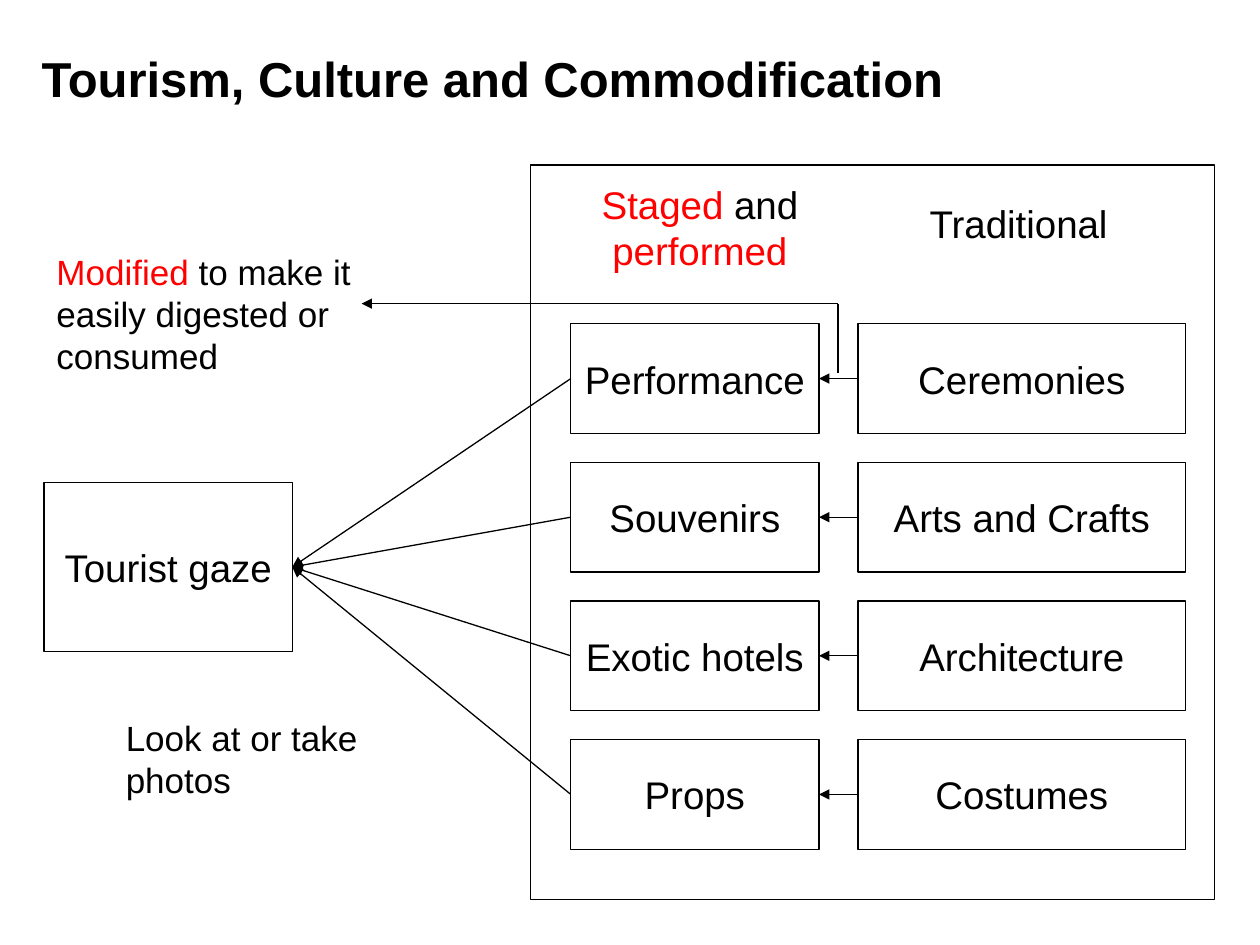
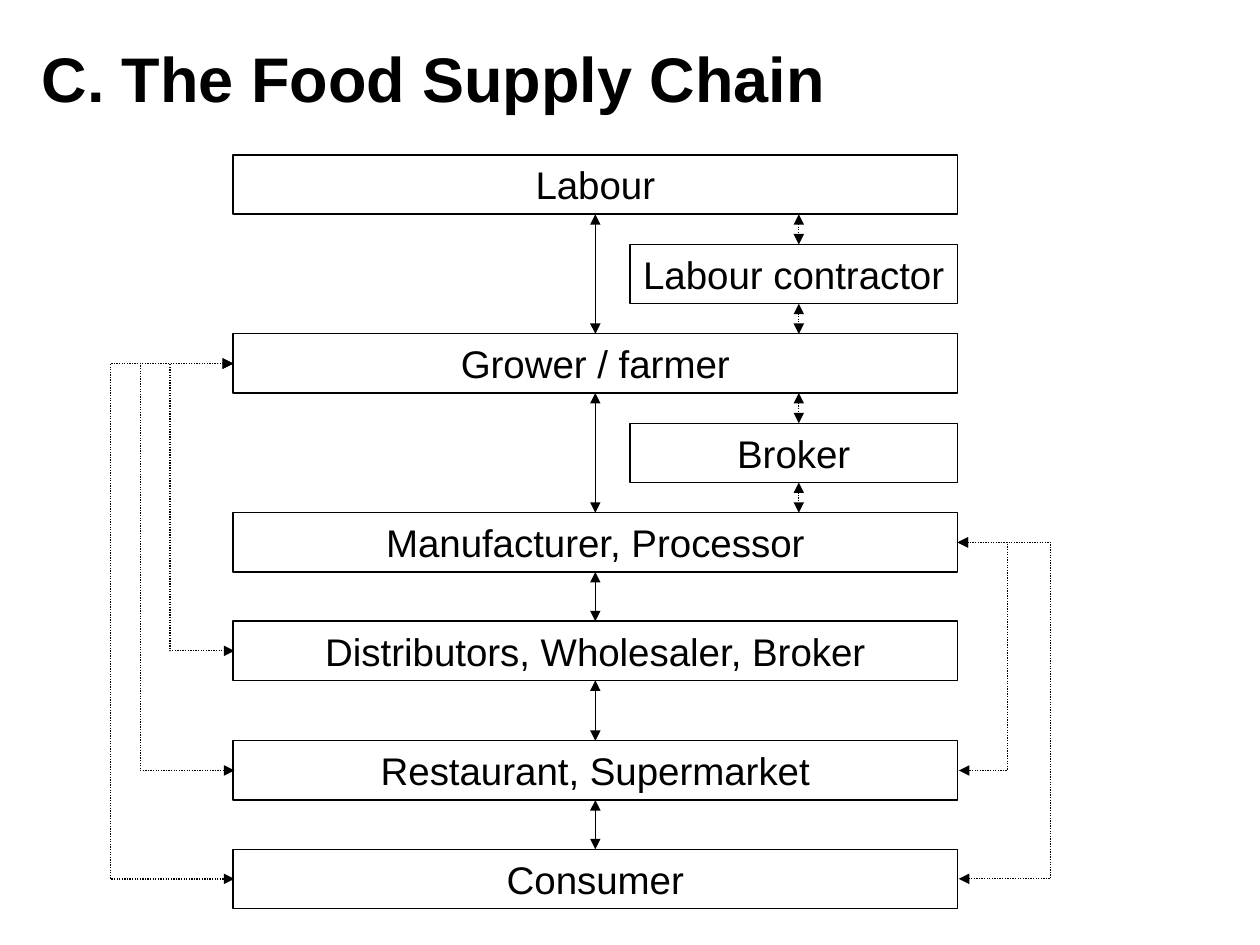
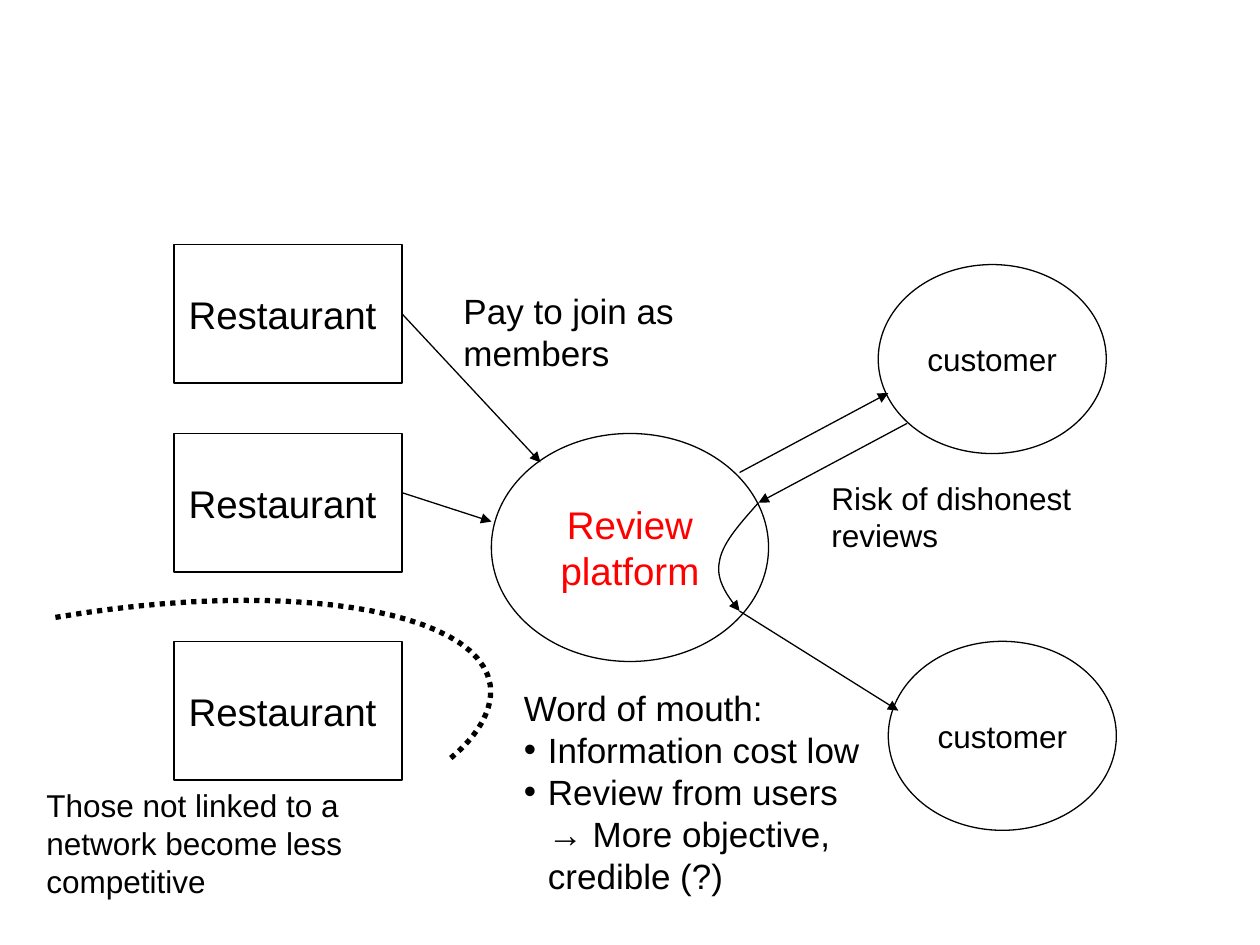
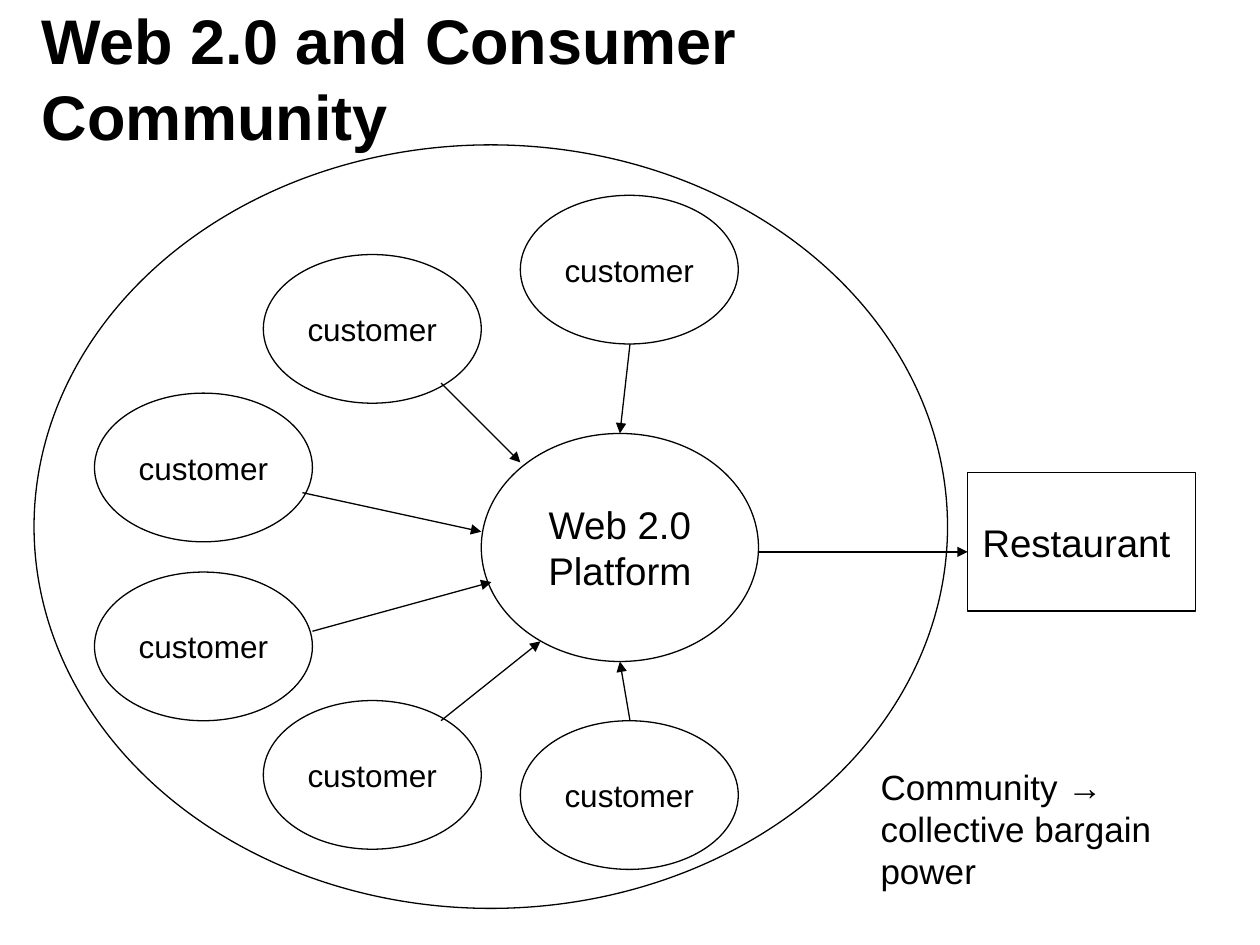
from dataclasses import dataclass

from lxml import etree
from pptx import Presentation
from pptx.dml.color import RGBColor
from pptx.enum import dml, shapes, text
from pptx.oxml import ns
from pptx.util import Inches, Pt


@dataclass(frozen=True)
class Theme:
    font: str = "Arial"
    ink: RGBColor = RGBColor(0, 0, 0)
    accent: RGBColor = RGBColor(0xFF, 0, 0)
    title: int = 36
    long_title: int = 28
    label: int = 22
    note: int = 20
    small: int = 18
    line: float = 0.75
    heavy: float = 3


@dataclass(frozen=True)
class Box:
    """A region in inches; `at` turns offsets within it into slide positions."""
    x: float
    y: float
    w: float
    h: float

    def at(self, dx, dy):
        return self.x + dx, self.y + dy

    def sub(self, dx, dy, w, h):
        return Box(*self.at(dx, dy), w, h)

    def lengths(self):
        return [Inches(v) for v in (self.x, self.y, self.w, self.h)]


T = Theme()
TITLE = Box(0.23, 0.15, 8.03, 0.93)
TOP, LEFT, BOTTOM, RIGHT = range(4)
RECT, OVAL = shapes.MSO_SHAPE.RECTANGLE, shapes.MSO_SHAPE.OVAL
CENTER = text.PP_ALIGN.CENTER


def style_paragraph(p, size, color=T.ink, align=None, bold=False):
    p.font.name, p.font.size, p.font.bold = T.font, Pt(size), bold
    p.font.color.rgb = color
    p.alignment = align


def add_runs(p, runs):
    """Fill a paragraph with (words, colour) pairs."""
    for words, color in runs:
        r = p.add_run()
        r.text = words
        r.font.color.rgb = color


def style_line(sp, width=T.line, dotted=False, heads=""):
    """Format an outline; heads names the ends with arrowheads."""
    sp.line.color.rgb = T.ink
    sp.line.width = Pt(width)
    if dotted:
        sp.line.dash_style = dml.MSO_LINE.ROUND_DOT
    ln = sp._element.spPr.find(ns.qn("a:ln"))
    for end in heads.split():
        etree.SubElement(ln, ns.qn(f"a:{end}End"), type="triangle")


def add_title(slide, words, size=T.title):
    sp = slide.shapes.title
    sp.left, sp.top, sp.width, sp.height = TITLE.lengths()
    tf = sp.text_frame
    tf.text = words
    tf.auto_size = text.MSO_AUTO_SIZE.NONE
    tf.vertical_anchor = text.MSO_ANCHOR.MIDDLE
    style_paragraph(tf.paragraphs[0], size, align=text.PP_ALIGN.LEFT, bold=True)


def add_node(slide, box, words="", kind=RECT, size=T.label, color=T.ink):
    """Add an unfilled outlined shape with a centred label."""
    sp = slide.shapes.add_shape(kind, *box.lengths())
    sp.shadow.inherit = False
    sp.fill.background()
    style_line(sp)
    if words:
        tf = sp.text_frame
        tf.text = words
        tf.word_wrap = kind == OVAL and " " in words
        tf.vertical_anchor = text.MSO_ANCHOR.MIDDLE
        style_paragraph(tf.paragraphs[0], size, color, CENTER)
    return sp


def add_note(slide, box, content, size=T.note, align=None):
    """Add a text box; content is a string or a list of coloured runs."""
    sp = slide.shapes.add_textbox(*box.lengths())
    tf = sp.text_frame
    tf.word_wrap = True
    tf.auto_size = text.MSO_AUTO_SIZE.SHAPE_TO_FIT_TEXT
    p = tf.paragraphs[0]
    if isinstance(content, str):
        p.text = content
    else:
        add_runs(p, content)
    style_paragraph(p, size, align=align)
    return tf


def add_line(slide, start, end, heads="tail", dotted=False,
             kind=shapes.MSO_CONNECTOR.STRAIGHT):
    ends = [Inches(v) for v in (*start, *end)]
    c = slide.shapes.add_connector(kind, *ends)
    style_line(c, dotted=dotted, heads=heads)
    etree.SubElement(c._element.spPr, ns.qn("a:effectLst"))
    return c


def link(slide, a, side_a, b, side_b, heads="tail", **style):
    """Join two shapes with a connector glued to the given sides."""
    c = add_line(slide, (0, 0), (1, 1), heads, **style)
    c.begin_connect(a, side_a)
    c.end_connect(b, side_b)
    return c


def link_around(slide, a, b, side, reach):
    """Join the same side of two shapes by a dotted elbow that bulges by reach."""
    c = link(slide, a, side, b, side, "head tail", dotted=True,
             kind=shapes.MSO_CONNECTOR.ELBOW)
    span = 0.01
    c.width = Inches(span)
    turned = side == LEFT
    xfrm = c._element.spPr.find(ns.qn("a:xfrm"))
    xfrm.set("rot", "10800000" if turned else "0")
    for flip in ("flipH", "flipV"):
        xfrm.set(flip, str(int(turned)))
    geom = c._element.spPr.find(ns.qn("a:prstGeom"))
    guides = geom.find(ns.qn("a:avLst"))
    if guides is None:
        guides = etree.SubElement(geom, ns.qn("a:avLst"))
    etree.SubElement(guides, ns.qn("a:gd"), name="adj1",
                     fmla=f"val {round(reach / span * 100000)}")


def bezier(points, steps=24):
    """Sample a chain of cubic curves: a start, then three points for each."""
    samples = [points[0]]
    for i in range(0, len(points) - 1, 3):
        curve = points[i:i + 4]
        for k in range(1, steps + 1):
            t = k / steps
            weights = ((1 - t) ** 3, 3 * t * (1 - t) ** 2, 3 * t * t * (1 - t), t ** 3)
            samples.append(tuple(sum(w * q[axis] for w, q in zip(weights, curve))
                                 for axis in (0, 1)))
    return samples


def add_curve(slide, points, **style):
    start, *rest = [(Inches(x), Inches(y)) for x, y in bezier(points)]
    builder = slide.shapes.build_freeform(*start)
    builder.add_line_segments(rest, close=False)
    sp = builder.convert_to_shape()
    sp.shadow.inherit = False
    sp.fill.background()
    style_line(sp, **style)


def staged_panel(slide, box):
    """Draw the traditional-to-staged grid and return the staged nodes."""
    add_node(slide, box)
    add_note(slide, box.sub(3.07, 0.23, 1.63, 0.47), "Traditional", T.label)
    add_note(slide, box.sub(0.32, 0.08, 2.05, 0.83),
             [("Staged", T.accent), (" and ", T.ink), ("performed", T.accent)],
             T.label, CENTER)
    rows = [("Performance", "Ceremonies"), ("Souvenirs", "Arts and Crafts"),
            ("Exotic hotels", "Architecture"), ("Props", "Costumes")]
    staged_nodes = []
    for i, (staged, traditional) in enumerate(rows):
        y = 1.26 + 1.1 * i
        result = add_node(slide, box.sub(0.32, y, 1.97, 0.87), staged)
        source = add_node(slide, box.sub(2.6, y, 2.6, 0.87), traditional)
        link(slide, source, LEFT, result, RIGHT)
        staged_nodes.append(result)
    corner = box.at(2.44, 1.1)
    add_line(slide, box.at(2.44, 1.65), corner, heads="")
    add_line(slide, corner, box.at(-1.34, 1.1))
    return staged_nodes


def commodification_slide(slide):
    add_title(slide, "Tourism, Culture and Commodification", T.long_title)
    staged_nodes = staged_panel(slide, Box(4.21, 1.31, 5.43, 5.83))
    gaze = add_node(slide, Box(0.35, 3.83, 1.97, 1.34), "Tourist gaze")
    for node in staged_nodes:
        link(slide, node, LEFT, gaze, RIGHT)
    add_note(slide, Box(0.35, 1.94, 2.76, 1.1),
             [("Modified", T.accent),
              (" to make it easily digested or consumed", T.ink)])
    add_note(slide, Box(0.9, 5.64, 2.6, 0.77), "Look at or take photos")


def supply_chain(slide, box):
    height, side_width, step = 0.47, 2.6, 0.71
    stages = [("Labour", 0), ("Grower / farmer", 1.42),
              ("Manufacturer, Processor", 2.84),
              ("Distributors, Wholesaler, Broker", 3.7),
              ("Restaurant, Supermarket", 4.65), ("Consumer", 5.51)]
    nodes = [add_node(slide, box.sub(0, y, box.w, height), words)
             for words, y in stages]
    for upper, lower in zip(nodes, nodes[1:]):
        link(slide, upper, BOTTOM, lower, TOP, "head tail")

    for i, words in enumerate(("Labour contractor", "Broker")):
        add_node(slide, box.sub(box.w - side_width, step * (2 * i + 1),
                                side_width, height), words)
    for i in range(4):
        add_line(slide, box.at(4.49, step * i + height),
                 box.at(4.49, step * (i + 1)), "head tail", dotted=True)

    _, grower, maker, distributor, restaurant, consumer = nodes
    for target, reach in ((consumer, -0.99), (restaurant, -0.75), (distributor, -0.51)):
        link_around(slide, grower, target, LEFT, reach)
    for target, reach in ((restaurant, 0.4), (consumer, 0.75)):
        link_around(slide, maker, target, RIGHT, reach)


def supply_chain_slide(slide):
    add_title(slide, "C. The Food Supply Chain")
    supply_chain(slide, Box(1.85, 1.23, 5.75, 5.98))


def word_of_mouth(slide, box):
    tf = add_note(slide, box, "Word of mouth:")
    for words in ("Information cost low",
                  "Review from users \v→ More objective, credible (?)"):
        p = tf.add_paragraph()
        p.text = words
        style_paragraph(p, T.note)
    for i, p in enumerate(tf.paragraphs):
        pPr = p._p.get_or_add_pPr()
        pPr.set("marL", str(Inches(0.19)))
        pPr.set("indent", str(-Inches(0.19)))
        if i:
            run_style = pPr.find(ns.qn("a:defRPr"))
            run_style.addprevious(etree.Element(ns.qn("a:buFont"), typeface=T.font))
            run_style.addprevious(etree.Element(ns.qn("a:buChar"), char="•"))


def review_network(slide, box):
    add_node(slide, box.sub(3.63, 1.5, 2.2, 1.81), "Review platform", OVAL,
             color=T.accent)
    for y in (0, 1.5, 3.15):
        add_node(slide, box.sub(1.11, y, 1.81, 1.1), "Restaurant ")
    for x, y in ((6.7, 0.16), (6.78, 3.15)):
        add_node(slide, box.sub(x, y, 1.81, 1.5), "customer", OVAL, T.small)

    arrows = [((5.6, 1.81), (6.78, 1.18)), ((6.93, 1.42), (5.75, 2.05)),
              ((2.92, 0.55), (4.02, 1.73)), ((2.92, 1.97), (3.63, 2.2)),
              ((5.6, 2.91), (6.86, 3.7))]
    for start, end in arrows:
        add_line(slide, box.at(*start), box.at(*end))

    review_path = [(5.75, 2.05), (5.61, 2.21), (5.46, 2.37), (5.44, 2.52),
                   (5.41, 2.66), (5.5, 2.79), (5.6, 2.91)]
    boundary = [(0.17, 2.96), (1.98, 2.65), (3.52, 2.89), (3.62, 3.49),
                (3.65, 3.68), (3.53, 3.9), (3.29, 4.09)]
    add_curve(slide, [box.at(*q) for q in review_path], heads="tail")
    add_curve(slide, [box.at(*q) for q in boundary], width=T.heavy, dotted=True)

    word_of_mouth(slide, box.sub(3.79, 3.46, 3.2, 1.77))
    add_note(slide, box.sub(3.31, 0.31, 2.05, 0.77), "Pay to join as members")
    add_note(slide, box.sub(6.23, 1.81, 2.46, 0.7), "Risk of dishonest reviews",
             T.small)
    add_note(slide, box.sub(0, 4.25, 2.76, 1),
             "Those not linked to a network become less competitive", T.small)


def review_network_slide(slide):
    review_network(slide, Box(0.27, 1.94, 8.69, 5.25))


def consumer_community(slide, box):
    add_node(slide, box, kind=OVAL)
    add_node(slide, box.sub(3.55, 2.29, 2.2, 1.81), "Web 2.0 Platform", OVAL)
    # Customer's place, then its arrow's start and end
    customers = [((3.86, 0.4), (4.73, 1.58), (4.65, 2.29)),
                 ((1.82, 0.87), (3.23, 1.89), (3.86, 2.52)),
                 ((0.48, 1.97), (2.13, 2.76), (3.55, 3.07)),
                 ((0.48, 3.39), (2.21, 3.86), (3.63, 3.47)),
                 ((1.82, 4.41), (3.23, 4.57), (4.02, 3.94)),
                 ((3.86, 4.57), (4.73, 4.57), (4.65, 4.1))]
    for place, start, end in customers:
        add_node(slide, box.sub(*place, 1.73, 1.18), "customer", OVAL, T.small)
        add_line(slide, box.at(*start), box.at(*end))
    add_node(slide, box.sub(7.41, 2.6, 1.81, 1.1), "Restaurant ")
    add_line(slide, box.at(5.75, 3.23), box.at(7.41, 3.23))
    add_note(slide, box.sub(6.62, 4.88, 2.7, 1.1),
             "Community → collective bargain power")


def community_slide(slide):
    add_title(slide, "Web 2.0 and Consumer Community")
    consumer_community(slide, Box(0.27, 1.15, 7.25, 6.06))


def main():
    prs = Presentation()
    prs.slide_width, prs.slide_height = Inches(10), Inches(7.5)
    title_only, blank = prs.slide_layouts[5], prs.slide_layouts[6]
    for layout, build in ((title_only, commodification_slide),
                          (title_only, supply_chain_slide),
                          (blank, review_network_slide),
                          (title_only, community_slide)):
        build(prs.slides.add_slide(layout))
    prs.save("out.pptx")


if __name__ == "__main__":
    main()
